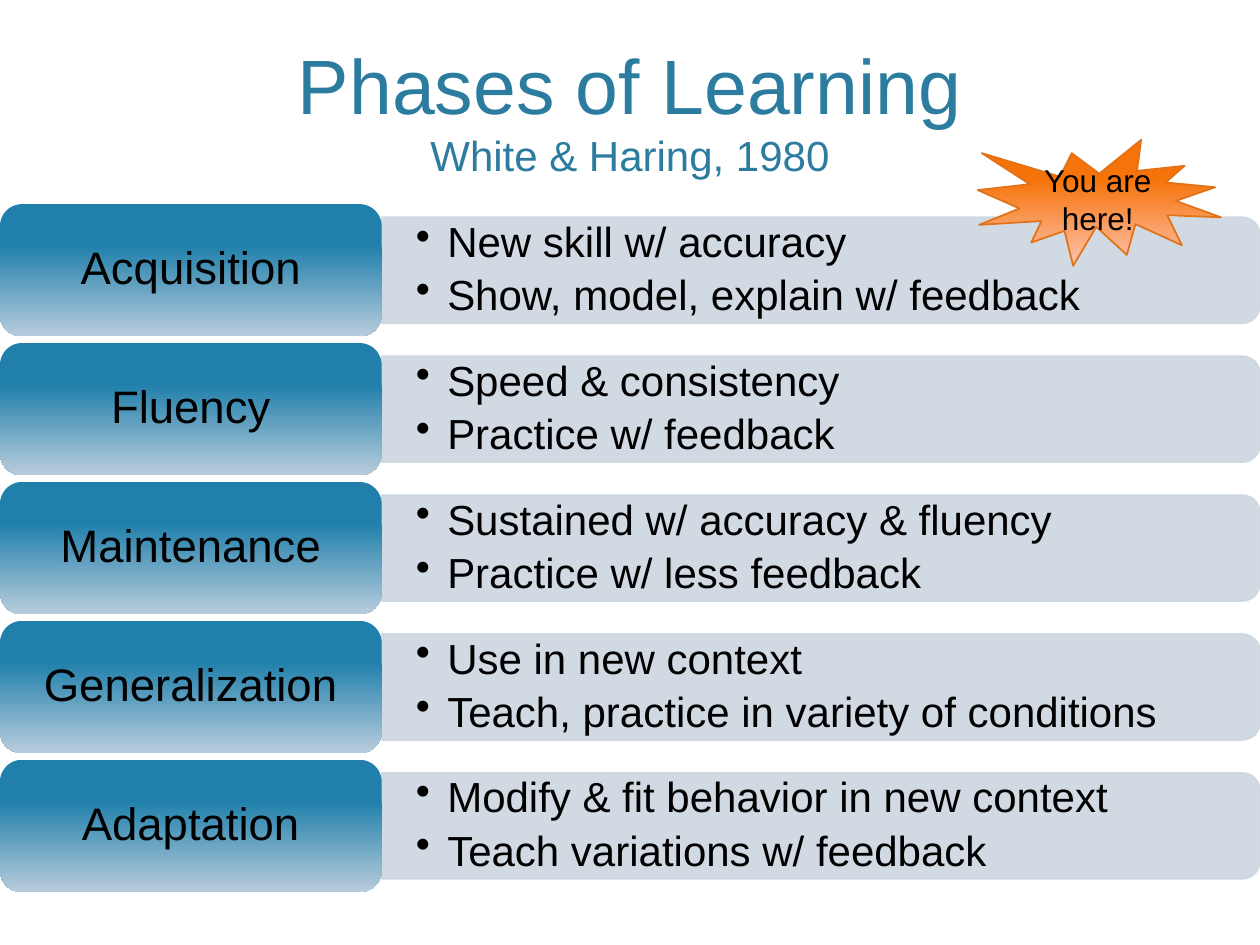
from lxml.etree import SubElement
from pptx import Presentation
from pptx.dml.color import RGBColor
from pptx.enum.shapes import MSO_SHAPE
from pptx.enum.text import MSO_ANCHOR, PP_ALIGN
from pptx.oxml.ns import qn
from pptx.util import Inches, Pt

TITLE, CITATION = "Phases of Learning", "White & Haring, 1980"
PHASES = [
    ("Acquisition", ["New skill w/ accuracy", "Show, model, explain w/ feedback"]),
    ("Fluency", ["Speed & consistency", "Practice w/ feedback"]),
    ("Maintenance", ["Sustained w/ accuracy & fluency", "Practice w/ less feedback"]),
    ("Generalization", ["Use in new context", "Teach, practice in variety of conditions"]),
    ("Adaptation", ["Modify & fit behavior in new context", "Teach variations w/ feedback"]),
]
MARKER = "You are here!"

FONT = "Arial"
BLACK, TITLE_BLUE, BAR_GREY = "000000", "2C7C9F", "CDD7DF"
LABEL_GRADIENT = ("2080AB", "B8CCDC")
MARKER_GRADIENT, MARKER_EDGE = ("F67309", "FEC3B0"), "E27218"

SLIDE_W, SLIDE_H = 10, 7.5
LABEL_W = 3.03
BAR_W = SLIDE_W - LABEL_W
FIRST_ROW, LAST_ROW = 1.62, 6.03
ROW_PITCH = (LAST_ROW - FIRST_ROW) / (len(PHASES) - 1)
LABEL_H = ROW_PITCH / 1.05
BAR_H = 0.8 * LABEL_H


def rgb(color):
    return RGBColor.from_string(color)


def set_font(target, size, color=BLACK):
    target.font.name, target.font.size = FONT, Pt(size)
    target.font.color.rgb = rgb(color)


def set_insets(frame, across, down):
    frame.margin_left = frame.margin_right = Inches(across)
    frame.margin_top = frame.margin_bottom = Inches(down)


def add_plain_shape(kind, left, top, width, height):
    shape = slide.shapes.add_shape(kind, *map(Inches, (left, top, width, height)))
    shape.shadow.inherit = False
    return shape


def fill_downward(shape, colors):
    """Fill with a top-to-bottom gradient that starts to change at 31 %."""
    shape.fill.gradient()
    shape.fill.gradient_angle = 270
    for stop, position, color in zip(shape.fill.gradient_stops, (0.31, 1), colors):
        stop.position = position
        stop.color.rgb = rgb(color)


def center_text(shape, text, size):
    frame = shape.text_frame
    frame.word_wrap, frame.vertical_anchor = True, MSO_ANCHOR.MIDDLE
    frame.text = text
    paragraph = frame.paragraphs[0]
    paragraph.alignment = PP_ALIGN.CENTER
    set_font(paragraph, size)
    return paragraph


def add_bar(middle):
    """Draw a bar upright and turn it, so that its rounded end points right."""
    center = LABEL_W + BAR_W / 2
    bar = add_plain_shape(MSO_SHAPE.ROUND_2_SAME_RECTANGLE, center - BAR_H / 2,
                          middle - BAR_W / 2, BAR_H, BAR_W)
    bar.rotation = 90
    bar.fill.solid()
    bar.line.width = Pt(1)
    for paint in (bar.fill, bar.line.fill):
        paint.solid()
        paint.fore_color.rgb = rgb(BAR_GREY)
    for color in bar.element.spPr.iter(qn("a:srgbClr")):
        SubElement(color, qn("a:alpha"), val="90000")


def add_details(middle, details):
    height = 0.76
    box = slide.shapes.add_textbox(Inches(LABEL_W), Inches(middle - height / 2),
                                   Inches(BAR_W - 0.04), Inches(height))
    frame = box.text_frame
    frame.word_wrap, frame.vertical_anchor = True, MSO_ANCHOR.MIDDLE
    set_insets(frame, 0.27, 0.14)
    frame.text = "\n".join(details)
    for paragraph in frame.paragraphs:
        paragraph.line_spacing, paragraph.space_after = 0.9, Pt(4.5)
        set_font(paragraph, 24)
        properties = paragraph._p.get_or_add_pPr()
        properties.set("marL", str(Inches(0.25)))
        properties.set("indent", str(-Inches(0.25)))
        bullet = properties.makeelement(qn("a:buChar"), {"char": "•"})
        properties.insert_element_before(bullet, "a:tabLst", "a:defRPr", "a:extLst")


def add_label(top, name):
    label = add_plain_shape(MSO_SHAPE.ROUNDED_RECTANGLE, 0, top, LABEL_W, LABEL_H)
    fill_downward(label, LABEL_GRADIENT)
    label.line.fill.background()
    center_text(label, name, 26).line_spacing = 0.9


def add_title():
    title = slide.shapes.title
    title.left, title.top, title.width, title.height = map(Inches, (0.75, 0.23, 8.5, 1.25))
    frame = title.text_frame
    frame.vertical_anchor = MSO_ANCHOR.BOTTOM
    set_insets(frame, 0.1, 0.05)
    frame.text = f"{TITLE}\v{CITATION}"
    paragraph = frame.paragraphs[0]
    paragraph.alignment = PP_ALIGN.CENTER
    for run, size in zip(paragraph.runs, (44, 24)):
        set_font(run, size, TITLE_BLUE)


def add_marker():
    marker = add_plain_shape(MSO_SHAPE.EXPLOSION1, 7.76, 1.11, 1.93, 1)
    fill_downward(marker, MARKER_GRADIENT)
    marker.line.color.rgb, marker.line.width = rgb(MARKER_EDGE), Pt(1)
    center_text(marker, MARKER, 18)


presentation = Presentation()
presentation.slide_width, presentation.slide_height = Inches(SLIDE_W), Inches(SLIDE_H)
slide = presentation.slides.add_slide(presentation.slide_layouts[5])

add_title()
for row, (name, details) in enumerate(PHASES):
    top = FIRST_ROW + row * ROW_PITCH
    middle = top + LABEL_H / 2
    add_bar(middle)
    add_details(middle, details)
    add_label(top, name)
add_marker()

presentation.save("out.pptx")
